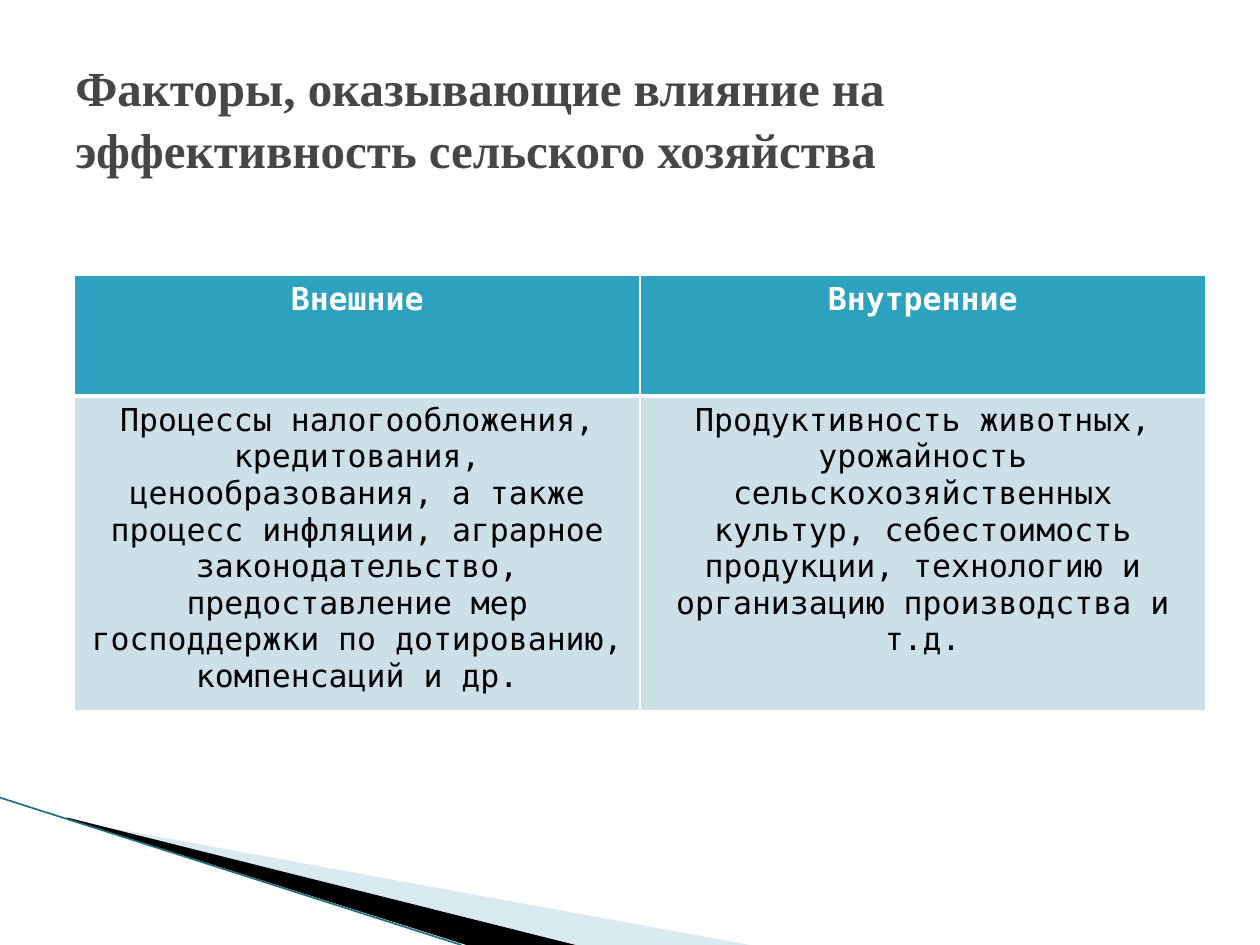
from lxml.etree import SubElement
from pptx import Presentation
from pptx.dml.color import RGBColor
from pptx.enum.shapes import MSO_CONNECTOR as Connector
from pptx.enum.text import MSO_ANCHOR as Anchor, PP_ALIGN as Align
from pptx.oxml.ns import qn
from pptx.util import Cm, Pt


def rgb(value):
    return RGBColor.from_string(value)


def write(frame, text, color, **font_values):
    para = frame.paragraphs[0]
    span = para.add_run()
    span.text = text
    span.font.color.rgb = rgb(color)
    for name, value in font_values.items():
        setattr(span.font, name, value)
    return para


deck = Presentation()
deck.slide_width, deck.slide_height = Cm(25.4), Cm(19.05)
slide = deck.slides.add_slide(deck.slide_layouts[6])
shapes = slide.shapes

# Corner wedges
wedges = [
    ("A0CBDC", 40, [(1.4, 16.54), (15.11, 19.05), (11.58, 19.05), (1.4, 16.51)]),
    ("000000", 100, [(1.35, 16.48), (11.6, 19.05), (9.4, 19.05), (1.37, 16.51)]),
]
for color, opacity, points in wedges:
    start, *others = [(Cm(x), Cm(y)) for x, y in points]
    builder = shapes.build_freeform(*start)
    builder.add_line_segments(others, close=True)
    wedge = builder.convert_to_shape()
    wedge.shadow.inherit = False
    wedge.fill.solid()
    wedge.fill.fore_color.rgb = rgb(color)
    wedge.line.fill.background()
    if opacity < 100:
        color_node = wedge.fill._xPr.find(".//" + qn("a:srgbClr"))
        SubElement(color_node, qn("a:alpha"), val=str(opacity * 1000))

edge = shapes.add_connector(Connector.STRAIGHT, Cm(0), Cm(16.08), Cm(9.3), Cm(19.05))
edge.line.color.rgb = rgb("1B7284")
edge.line.width = Pt(0.95)
SubElement(edge._element.spPr, qn("a:effectLst"))

# Title
title = shapes.add_textbox(Cm(1.27), Cm(0.76), Cm(22.86), Cm(3.18)).text_frame
title.word_wrap = True
title.vertical_anchor = Anchor.MIDDLE
heading = write(title, "Факторы, оказывающие влияние на эффективность сельского хозяйства",
                "464646", name="Times New Roman", size=Pt(28), bold=True)
heading.line_spacing = 1.05

# Table of factors
rows = [
    ["Внешние", "Внутренние"],
    ["Процессы налогообложения, кредитования, ценообразования, а также процесс "
     "инфляции, аграрное законодательство, предоставление мер господдержки по "
     "дотированию, компенсаций и др.",
     "Продуктивность животных, урожайность сельскохозяйственных культур, "
     "себестоимость продукции, технологию и организацию производства и т.д."],
]
row_formats = [
    {"height": 2.44, "fill": "2DA2BF", "color": "FFFFFF", "bold": True,
     "borders": {"a:lnL": 1, "a:lnR": 1, "a:lnT": 1, "a:lnB": 3}},
    {"height": 6.02, "fill": "CDE0E8", "color": "000000", "bold": False,
     "borders": {"a:lnL": 1, "a:lnR": 1, "a:lnT": 3, "a:lnB": 1}},
]
table = shapes.add_table(2, 2, Cm(1.5), Cm(5.54), Cm(22.8), Cm(8.46)).table
for row, texts, style in zip(table.rows, rows, row_formats):
    row.height = Cm(style["height"])
    for cell, text in zip(row.cells, texts):
        para = write(cell.text_frame, text, style["color"],
                     name="DejaVu Sans Mono", size=Pt(18), bold=style["bold"])
        para.alignment = Align.CENTER
        properties = cell._tc.get_or_add_tcPr()
        for side, width in style["borders"].items():
            border = SubElement(properties, qn(side), w=str(Pt(width)))
            line_fill = SubElement(border, qn("a:solidFill"))
            SubElement(line_fill, qn("a:srgbClr"), val="FFFFFF")
        cell.fill.solid()
        cell.fill.fore_color.rgb = rgb(style["fill"])

deck.save("out.pptx")
